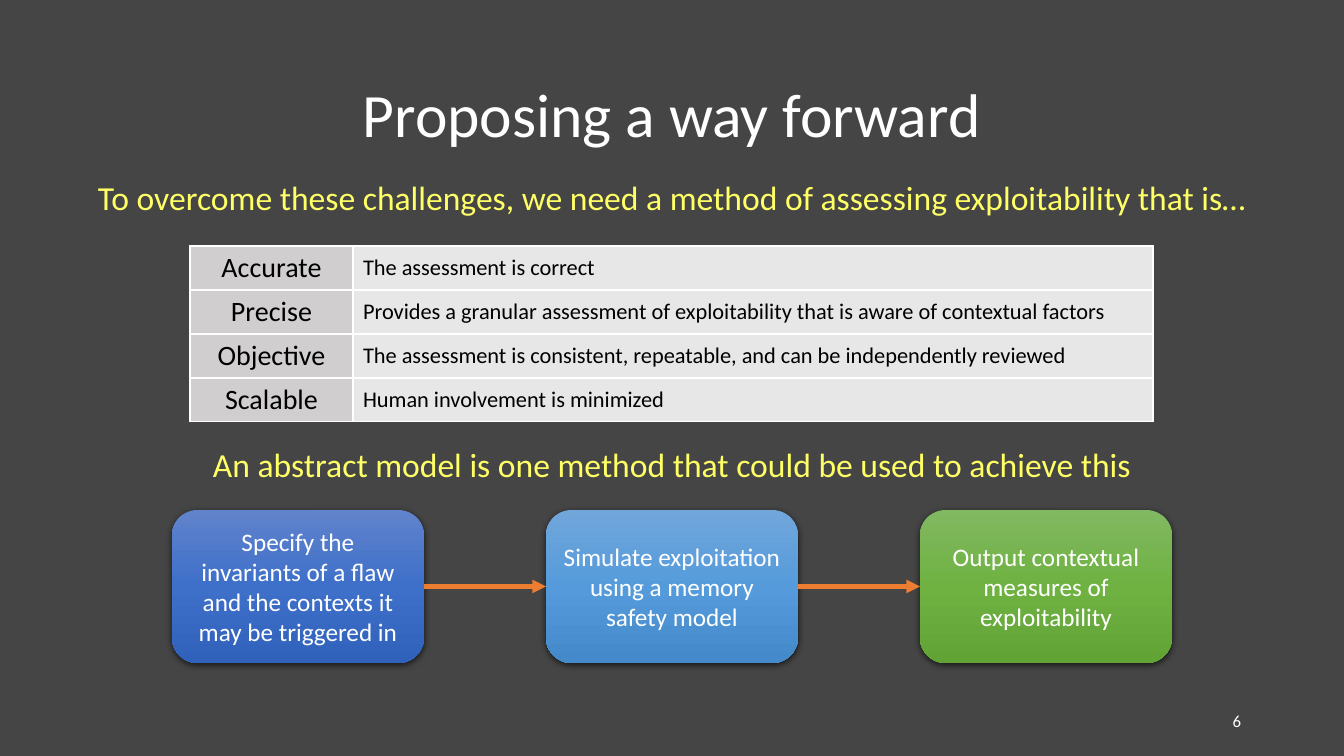
"""Build the slide that proposes a way forward for assessing exploitability."""
from pptx import Presentation
from pptx.dml.color import RGBColor
from pptx.enum.shapes import MSO_CONNECTOR, MSO_SHAPE
from pptx.enum.text import MSO_ANCHOR, MSO_AUTO_SIZE, PP_ALIGN
from pptx.oxml import parse_xml
from pptx.oxml.ns import nsdecls, qn
from pptx.util import Pt

PX = 914400 / 100.8
NS = nsdecls("a")
COLORS = {
    "background": "454545", "text": "FFFFFF", "caption": "FFFF66",
    "quality": "D0CECE", "meaning": "E7E7E7", "cell_text": "000000",
    "border": "FFFFFF", "arrow": "ED7D31", "shadow": "000000",
}


def px(*lengths):
    return [round(length * PX) for length in lengths]


def write(frame, text, size, color, align, anchor=MSO_ANCHOR.MIDDLE):
    frame.text = text
    frame.vertical_anchor = anchor
    paragraph = frame.paragraphs[0]
    paragraph.alignment = align
    paragraph.font.name = "Calibri"
    paragraph.font.size = Pt(size)
    paragraph.font.color.rgb = RGBColor.from_string(COLORS[color])


deck = Presentation()
deck.slide_width, deck.slide_height = px(1344, 756)
slide = deck.slides.add_slide(deck.slide_layouts[5])
slide.background.fill.solid()
slide.background.fill.fore_color.rgb = RGBColor.from_string(COLORS["background"])

title = slide.shapes.title
title.left, title.top, title.width, title.height = px(92, 40, 1160, 146)
write(title.text_frame, "Proposing a way forward", 44, "text", PP_ALIGN.CENTER)

captions = [
    (86, 172, 1172, "To overcome these challenges, we need a method of assessing exploitability that is…"),
    (203, 439, 938, "An abstract model is one method that could be used to achieve this"),
]
for left, top, width, wording in captions:
    caption = slide.shapes.add_textbox(*px(left, top, width, 50)).text_frame
    write(caption, wording, 24, "caption", PP_ALIGN.CENTER, MSO_ANCHOR.TOP)
    caption.word_wrap = False
    caption.auto_size = MSO_AUTO_SIZE.SHAPE_TO_FIT_TEXT

qualities = [
    ("Accurate", "The assessment is correct"),
    ("Precise", "Provides a granular assessment of exploitability that is aware of contextual factors"),
    ("Objective", "The assessment is consistent, repeatable, and can be independently reviewed"),
    ("Scalable", "Human involvement is minimized"),
]
columns = [("quality", 20, PP_ALIGN.CENTER), ("meaning", 16, PP_ALIGN.LEFT)]
criteria = slide.shapes.add_table(len(qualities), 2, *px(190, 246, 963, 176)).table
criteria.first_row = criteria.horz_banding = False
criteria.columns[0].width, criteria.columns[1].width = px(163, 800)
for row, wordings in enumerate(qualities):
    for column, (part, size, align) in enumerate(columns):
        cell = criteria.cell(row, column)
        write(cell.text_frame, wordings[column], size, "cell_text", align)
        cell.vertical_anchor = MSO_ANCHOR.MIDDLE
        borders = cell._tc.get_or_add_tcPr()
        for side in ("lnL", "lnR", "lnT", "lnB"):
            borders.append(parse_xml(
                f'<a:{side} {NS} w="12700"><a:solidFill>'
                f'<a:srgbClr val="{COLORS["border"]}"/></a:solidFill></a:{side}>'))
        cell.fill.solid()
        cell.fill.fore_color.rgb = RGBColor.from_string(COLORS[part])

steps = [
    ("Specify the invariants of a flaw and the contexts it may be triggered in",
     ("6183CB", "3E70CA", "3062BB")),
    ("Simulate exploitation using a memory safety model",
     ("71A6DB", "559BDB", "448ACA")),
    ("Output contextual measures of exploitability",
     ("81B861", "6FB242", "62A336")),
]
step_boxes = []
for index, (wording, shades) in enumerate(steps):
    step = slide.shapes.add_shape(
        MSO_SHAPE.ROUNDED_RECTANGLE, *px(172 + 374 * index, 510, 252, 153))
    step.line.fill.background()
    step.fill.gradient()
    step.fill.gradient_angle = 270
    stops = step._element.spPr.find(qn("a:gradFill")).find(qn("a:gsLst"))
    for stop in list(stops):
        stops.remove(stop)
    for position, shade in zip((0, 50000, 100000), shades):
        stops.append(parse_xml(
            f'<a:gs {NS} pos="{position}"><a:srgbClr val="{shade}"/></a:gs>'))
    step.shadow.inherit = False
    step._element.spPr.find(qn("a:effectLst")).append(parse_xml(
        f'<a:outerShdw {NS} blurRad="57150" dist="19050" dir="5400000" algn="ctr" '
        f'rotWithShape="0"><a:srgbClr val="{COLORS["shadow"]}">'
        '<a:alpha val="63000"/></a:srgbClr></a:outerShdw>'))
    step.text_frame.word_wrap = True
    write(step.text_frame, wording, 18, "text", PP_ALIGN.CENTER)
    step_boxes.append(step)

for source, target in zip(step_boxes, step_boxes[1:]):
    arrow = slide.shapes.add_connector(MSO_CONNECTOR.STRAIGHT, 0, 0, 0, 0)
    arrow.begin_connect(source, 3)
    arrow.end_connect(target, 1)
    arrow.line.color.rgb = RGBColor.from_string(COLORS["arrow"])
    arrow.line.width = Pt(3.25)
    arrow.line._get_or_add_ln().append(parse_xml(f'<a:tailEnd {NS} type="triangle"/>'))
    arrow._element.spPr.append(parse_xml(f"<a:effectLst {NS}/>"))

page_number = slide.shapes.add_textbox(*px(890, 701, 361, 40)).text_frame
page_number.word_wrap = True
write(page_number, "6", 12, "text", PP_ALIGN.RIGHT)

deck.save("out.pptx")
